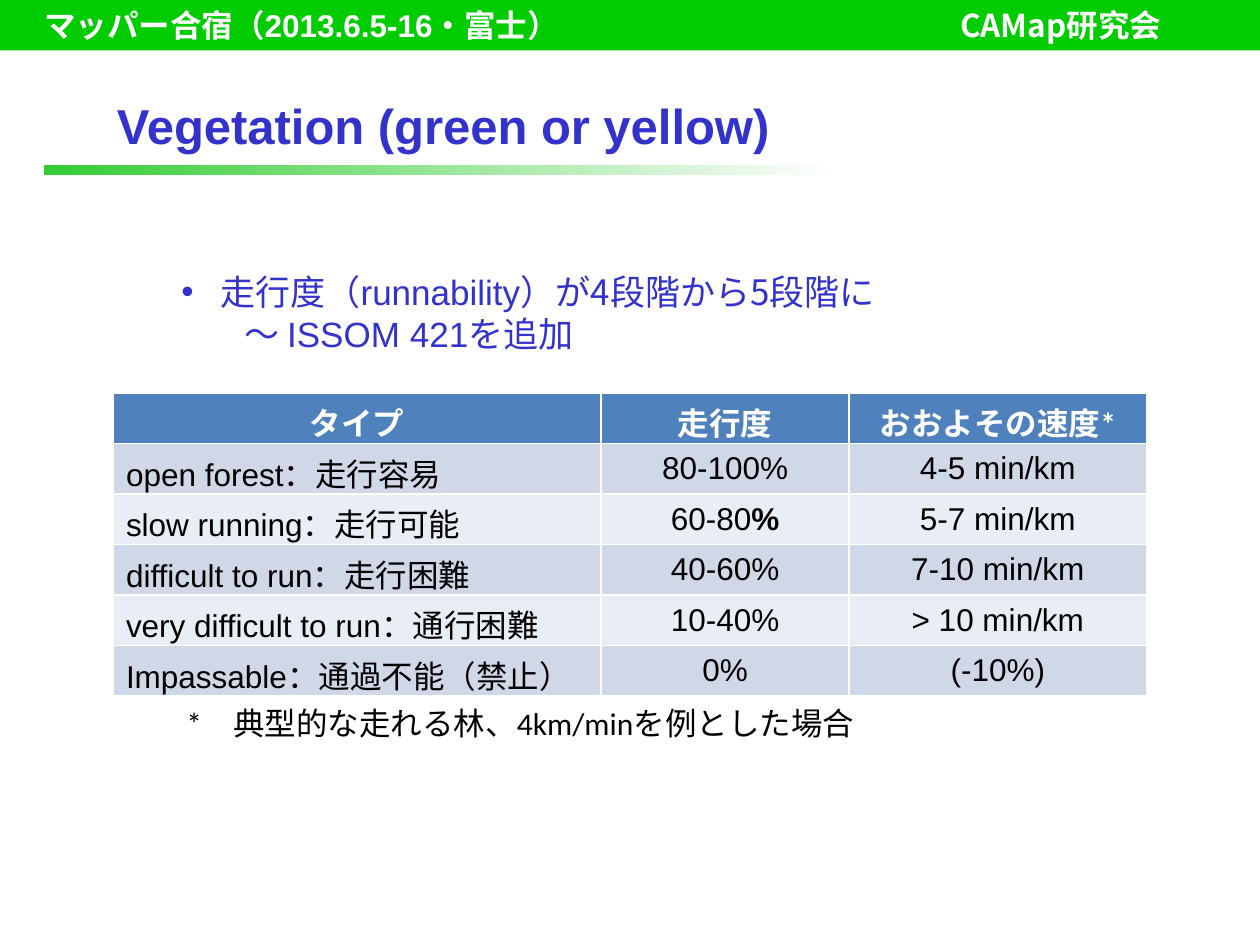
from pptx import Presentation
from pptx.dml.color import RGBColor
from pptx.enum.shapes import MSO_SHAPE as Shape
from pptx.enum.text import MSO_ANCHOR as Anchor, PP_ALIGN as Align
from pptx.oxml.ns import qn
from pptx.util import Inches, Pt
from lxml.etree import SubElement

WHITE = RGBColor(255, 255, 255)
BLACK = RGBColor(0, 0, 0)
BLUE = RGBColor(0x33, 0x33, 0xCC)
LIME = RGBColor(0x33, 0xCC, 0x33)
GREEN = RGBColor(0, 0xCC, 0)
HEAD = RGBColor(0x4F, 0x81, 0xBD)
BANDS = RGBColor(0xD0, 0xD8, 0xE8), RGBColor(0xE9, 0xED, 0xF4)
NOTO, ARIAL, CALIBRI = "Noto Sans CJK JP", "Arial", "Calibri"

TITLE = "Vegetation (green or yellow)"
BANNER = [("マッパー合宿（", NOTO), ("2013.6.5-16", ARIAL),
          ("・富士）\tCAMap研究会", NOTO)]
POINTS = [
    [("走行度（", NOTO), ("runnability", ARIAL), ("）が4段階から5段階に", NOTO)],
    [("\t～ ", NOTO), ("ISSOM 421", ARIAL), ("を追加", NOTO)],
]
NOTE = "*\u3000典型的な走れる林、4km/minを例とした場合"
ROWS = [
    ("タイプ", "走行度", "おおよその速度*"),
    ("open forest：走行容易", "80-100%", "4-5 min/km"),
    ("slow running：走行可能", "60-80%", "5-7 min/km"),
    ("difficult to run：走行困難", "40-60%", "7-10 min/km"),
    ("very difficult to run：通行困難", "10-40%", "> 10 min/km"),
    ("Impassable：通過不能（禁止）", "0%", "(-10%)"),
]
WIDTHS = 3.87, 1.97, 2.36
ROW = 0.4


def write(para, parts, size, color, bold=False):
    """Add (text, font) parts to a paragraph as runs."""
    for text, name in parts:
        run = para.add_run()
        run.text = text
        font = run.font
        font.name, font.size, font.bold = name, Pt(size), bold
        font.color.rgb = color


def add_bar(slide, *box):
    bar = slide.shapes.add_shape(Shape.RECTANGLE, *map(Inches, box))
    bar.shadow.inherit = False
    bar.line.fill.background()
    return bar


def add_text(slide, box, lines, size, color, bold=False):
    frame = slide.shapes.add_textbox(*map(Inches, box)).text_frame
    frame.word_wrap = True
    for i, parts in enumerate(lines):
        para = frame.add_paragraph() if i else frame.paragraphs[0]
        write(para, parts, size, color, bold)
    return frame


def add_banner(slide):
    bar = add_bar(slide, 0, 0, 10, 0.4)
    bar.fill.solid()
    bar.fill.fore_color.rgb = GREEN
    frame = bar.text_frame
    frame.margin_left = Inches(0.35)
    frame.margin_top = frame.margin_bottom = 0
    frame.vertical_anchor = Anchor.MIDDLE
    para = frame.paragraphs[0]
    para.alignment = Align.LEFT
    tabs = SubElement(para._p.get_or_add_pPr(), qn("a:tabLst"))
    SubElement(tabs, qn("a:tab"), pos=str(Inches(7.27)), algn="l")
    write(para, BANNER, 18, WHITE, True)


def add_bullet(para):
    props = para._p.get_or_add_pPr()
    props.set("marL", str(Inches(0.31)))
    props.set("indent", str(-Inches(0.31)))
    SubElement(props, qn("a:buFont"), typeface=ARIAL)
    SubElement(props, qn("a:buChar"), char="•")


def add_grid(slide):
    box = 0.9, 3.12, sum(WIDTHS), ROW * len(ROWS)
    table = slide.shapes.add_table(len(ROWS), len(WIDTHS),
                                   *map(Inches, box)).table
    for col, width in zip(table.columns, WIDTHS):
        col.width = Inches(width)
    for r, row in enumerate(ROWS):
        for c, text in enumerate(row):
            cell = table.cell(r, c)
            cell.fill.solid()
            cell.fill.fore_color.rgb = BANDS[(r - 1) % 2] if r else HEAD
            cell.vertical_anchor = Anchor.MIDDLE if r else Anchor.TOP
            para = cell.text_frame.paragraphs[0]
            para.alignment = Align.LEFT if r and not c else Align.CENTER
            if r:
                parts = [(text, ARIAL)]
                if text == "60-80%":
                    parts = [("60-80", ARIAL), ("%", ARIAL)]
                write(para, parts, 18, BLACK)
                para.runs[-1].font.bold = len(parts) > 1
            else:
                write(para, [(text, CALIBRI)], 18, WHITE, True)


def main():
    deck = Presentation()
    deck.slide_width, deck.slide_height = Inches(10), Inches(7.5)
    slide = deck.slides.add_slide(deck.slide_layouts[6])

    title = add_text(slide, (0.83, 0.6, 7.87, 0.79), [[(TITLE, ARIAL)]],
                     28, BLUE, True)
    title.vertical_anchor = Anchor.MIDDLE

    rule = add_bar(slide, 0.35, 1.31, 6.3, 0.08)
    rule.fill.gradient()
    rule.fill.gradient_angle = 0
    for stop, color in zip(rule.fill.gradient_stops, (LIME, WHITE)):
        stop.color.rgb = color

    add_banner(slide)
    add_grid(slide)
    add_text(slide, (1.38, 5.54, 5.51, 0.4), [[(NOTE, CALIBRI)]], 18, BLACK)
    points = add_text(slide, (1.34, 2.1, 7.32, 0.77), POINTS, 20, BLUE)
    add_bullet(points.paragraphs[0])
    deck.save("out.pptx")


if __name__ == "__main__":
    main()
